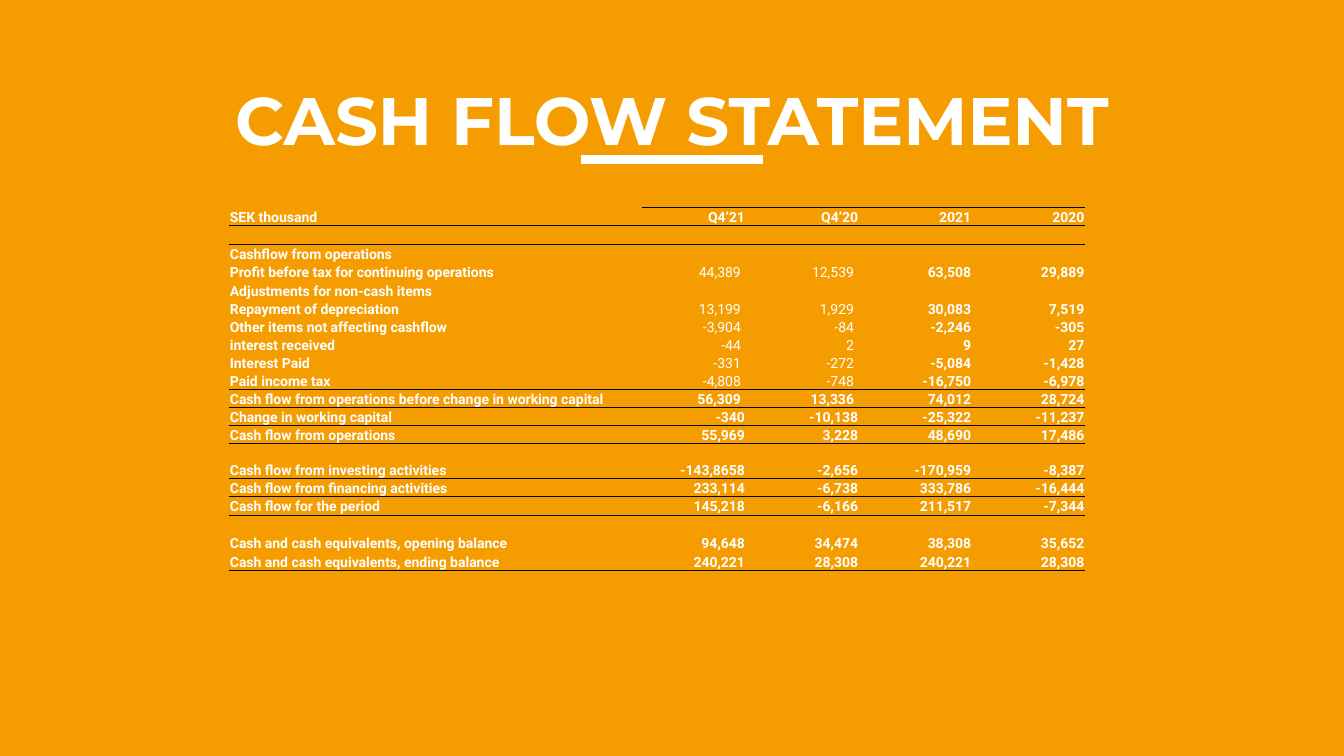
import dataclasses

import lxml.etree
import pptx
import pptx.dml.color
import pptx.enum.shapes
import pptx.enum.text
import pptx.oxml.ns
import pptx.util

ALIGN = pptx.enum.text.PP_ALIGN
ANCHOR = pptx.enum.text.MSO_ANCHOR
qn = pptx.oxml.ns.qn


@dataclasses.dataclass(frozen=True)
class Theme:
    background: str = "F59C00"
    text: str = "FFFFFF"
    border: str = "000000"
    title_font: str = "Montserrat"
    table_font: str = "Roboto"
    title_size: float = 48
    table_size: float = 10
    rule_width: float = 6
    border_width: float = 1
    plain_table: str = "{2D5ABB26-0587-4C30-8999-92F81FD0307C}"


STATEMENT = [
    ("tight", "SEK thousand", "Q4’21", "Q4’20", "2021", "2020"),
    (),
    ("tight", "Cashflow from operations"),
    ("light", "Profit before tax for continuing operations", "44,389", "12,539", "63,508", "29,889"),
    ("tight", "Adjustments for non-cash items"),
    ("light", "Repayment of depreciation", "13,199", "1,929", "30,083", "7,519"),
    ("light", "Other items not affecting cashflow", "-3,904", "-84", "-2,246", "-305"),
    ("light", "interest received", "-44", "2", "9", "27"),
    ("light", "Interest Paid", "-331", "-272", "-5,084", "-1,428"),
    ("light", "Paid income tax", "-4,808", "-748", "-16,750", "-6,978"),
    ("loose", "Cash flow from operations before change in working capital",
     "56,309", "13,336", "74,012", "28,724"),
    ("tight", "Change in working capital", "-340", "-10,138", "-25,322", "-11,237"),
    ("tight", "Cash flow from operations", "55,969", "3,228", "48,690", "17,486"),
    (),
    ("tight", "Cash flow from investing activities", "-143,8658", "-2,656", "-170,959", "-8,387"),
    ("tight", "Cash flow from financing activities", "233,114", "-6,738", "333,786", "-16,444"),
    ("tight", "Cash flow for the period", "145,218", "-6,166", "211,517", "-7,344"),
    (),
    ("tight", "Cash and cash equivalents, opening balance", "94,648", "34,474", "38,308", "35,652"),
    ("tight", "Cash and cash equivalents, ending balance", "240,221", "28,308", "240,221", "28,308"),
]
RULED_ROWS = {0, 9, 10, 11, 14, 15, 19}
COLUMN_WIDTHS = [30.75, 7.72] + [0.7, 7.72] * 3
ROW_HEIGHTS = [2.33 if 5 <= row <= 15 else 2.45 for row in range(len(STATEMENT))]


class SlideBuilder:
    def __init__(self, presentation, theme):
        self.theme = theme
        self.width = presentation.slide_width
        self.height = presentation.slide_height
        self.slide = presentation.slides.add_slide(presentation.slide_layouts[6])
        fill = self.slide.background.fill
        fill.solid()
        fill.fore_color.rgb = self.color(theme.background)

    def color(self, value):
        return pptx.dml.color.RGBColor.from_string(value)

    def across(self, percent):
        return round(self.width * percent / 100)

    def down(self, percent):
        return round(self.height * percent / 100)

    def add_run(self, paragraph, text, font, size, bold=True):
        run = paragraph.add_run()
        run.text = text
        run.font.name = font
        run.font.size = pptx.util.Pt(size)
        run.font.bold = bold
        run.font.color.rgb = self.color(self.theme.text)

    def title(self, text, left, top, width, height):
        shape = self.slide.shapes.add_textbox(
            self.across(left), self.down(top), self.across(width), self.down(height))
        frame = shape.text_frame
        frame.word_wrap = True
        frame.vertical_anchor = ANCHOR.BOTTOM
        paragraph = frame.paragraphs[0]
        paragraph.alignment = ALIGN.CENTER
        paragraph.line_spacing = 0.9
        self.add_run(paragraph, text, self.theme.title_font, self.theme.title_size)

    def rule(self, left, right, top):
        connector = self.slide.shapes.add_connector(
            pptx.enum.shapes.MSO_CONNECTOR.STRAIGHT,
            self.across(left), self.down(top), self.across(right), self.down(top))
        connector.line.color.rgb = self.color(self.theme.text)
        connector.line.width = pptx.util.Pt(self.theme.rule_width)
        lxml.etree.SubElement(connector._element.spPr, qn("a:effectLst"))

    def border(self, cell, side):
        line = lxml.etree.SubElement(
            cell._tc.get_or_add_tcPr(), qn("a:" + side),
            w=str(pptx.util.Pt(self.theme.border_width)))
        fill = lxml.etree.SubElement(line, qn("a:solidFill"))
        lxml.etree.SubElement(fill, qn("a:srgbClr"), val=self.theme.border)

    def cell(self, cell, text, kind, alignment):
        loose = kind in ("light", "loose")
        side = pptx.util.Inches(0.05 if loose else 0.01)
        cell.margin_left = cell.margin_right = side
        cell.margin_top = pptx.util.Inches(0.01 if text and not loose else 0)
        cell.margin_bottom = 0
        cell.vertical_anchor = ANCHOR.BOTTOM
        paragraph = cell.text_frame.paragraphs[0]
        paragraph.alignment = alignment
        if loose:
            paragraph.line_spacing = 1.07
        if text:
            self.add_run(paragraph, text, self.theme.table_font, self.theme.table_size, kind != "light")
        else:
            lxml.etree.SubElement(
                paragraph._p, qn("a:endParaRPr"), sz=str(self.theme.table_size * 100))

    def statement(self, left, top, rows, column_widths, row_heights, ruled_rows):
        table = self.slide.shapes.add_table(
            len(rows), len(column_widths), self.across(left), self.down(top),
            self.across(sum(column_widths)), self.down(sum(row_heights))).table
        table.first_row = table.horz_banding = False
        table._tbl.tblPr.find(qn("a:tableStyleId")).text = self.theme.plain_table
        for column, width in zip(table.columns, column_widths):
            column.width = self.across(width)
        for row, height in zip(table.rows, row_heights):
            row.height = self.down(height)
        for row_index, (kind, *texts) in enumerate(row or ("tight",) for row in rows):
            positions = [0, *range(1, len(column_widths), 2)]
            entries = dict(zip(positions, texts))
            for column_index in range(len(column_widths)):
                cell = table.cell(row_index, column_index)
                text = entries.get(column_index, "")
                cell_kind = kind if text and column_index in (1, 3) else "tight"
                self.cell(cell, text, cell_kind, ALIGN.RIGHT if column_index else ALIGN.LEFT)
                if row_index - 1 in ruled_rows or (row_index == 0 and column_index):
                    self.border(cell, "lnT")
                if row_index in ruled_rows:
                    self.border(cell, "lnB")
                cell.fill.background()


def main():
    presentation = pptx.Presentation()
    presentation.slide_width = pptx.util.Inches(13.33)
    presentation.slide_height = pptx.util.Inches(7.5)
    builder = SlideBuilder(presentation, Theme())
    builder.title("CASH FLOW STATEMENT", 12.5, 8.27, 75, 13.5)
    builder.rule(43.2, 56.8, 21.1)
    builder.statement(17.03, 27.4, STATEMENT, COLUMN_WIDTHS, ROW_HEIGHTS, RULED_ROWS)
    presentation.save("out.pptx")


if __name__ == "__main__":
    main()
